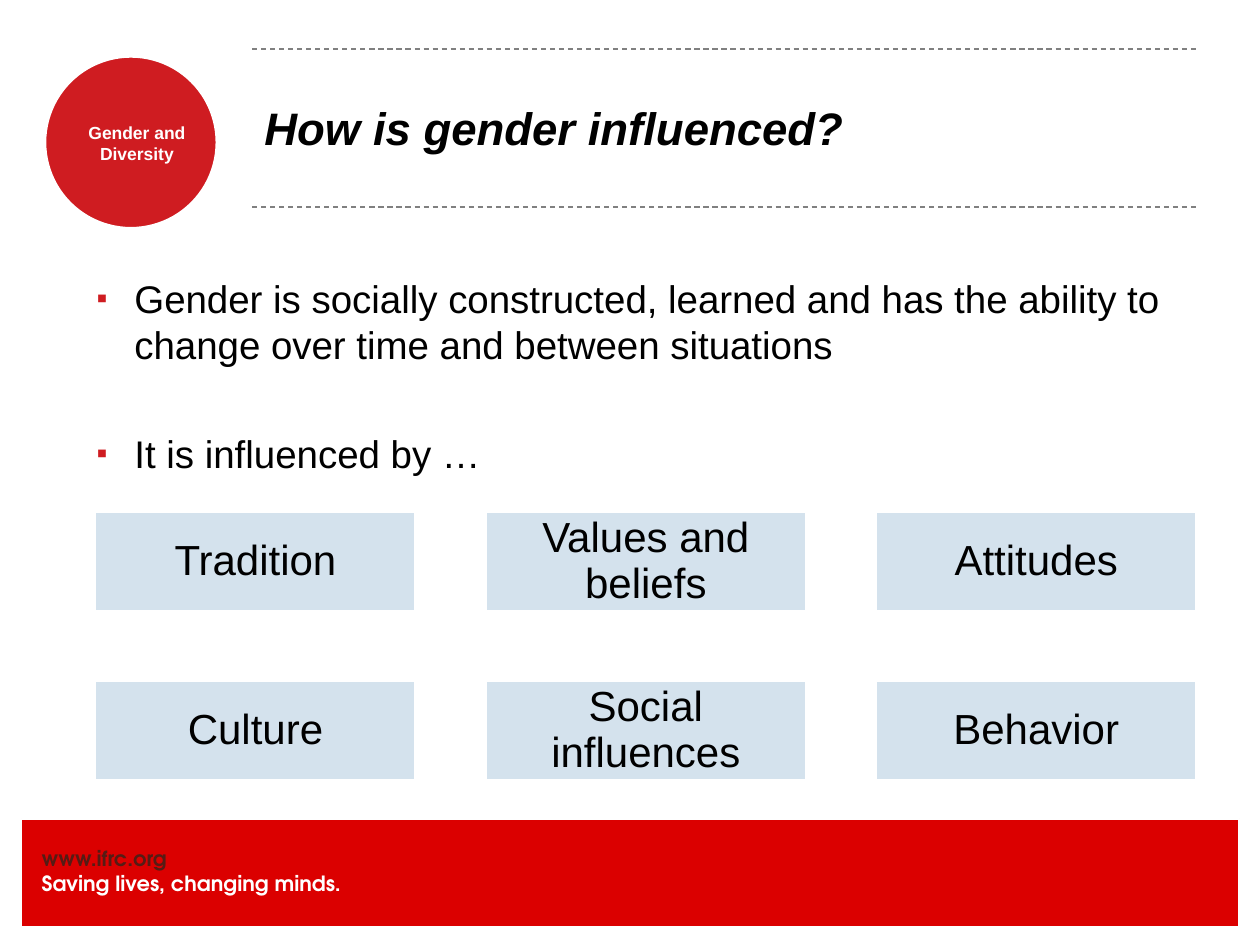
import dataclasses

import lxml.etree
import pptx
import pptx.dml.color
import pptx.enum.dml
import pptx.enum.shapes
import pptx.enum.text
import pptx.oxml.ns
import pptx.util

Cm = pptx.util.Cm
Pt = pptx.util.Pt
Color = pptx.dml.color.RGBColor.from_string
Shape = pptx.enum.shapes.MSO_SHAPE
Align = pptx.enum.text.PP_ALIGN
Anchor = pptx.enum.text.MSO_ANCHOR
qn = pptx.oxml.ns.qn


@dataclasses.dataclass(frozen=True)
class Theme:
    font: str = "Arial"
    footer_font: str = "TeX Gyre Adventor"
    black: str = "000000"
    white: str = "FFFFFF"
    gray: str = "808080"
    red: str = "CF1C21"
    footer_red: str = "DB0000"
    dark_red: str = "551C15"
    card_blue: str = "D4E2ED"
    title_size: int = 26
    card_size: int = 24
    body_size: int = 22
    footer_size: int = 12
    badge_size: int = 10


theme = Theme()


def write_text(shape, text, *, size, color=theme.black, font=theme.font, bold=False,
               italic=False, align=Align.LEFT, anchor=Anchor.TOP, margins=(0.25, 0.13),
               line_spacing=None, space_before=None, bullet=None):
    frame = shape.text_frame
    frame.word_wrap = True
    frame.vertical_anchor = anchor
    frame.margin_left = frame.margin_right = Cm(margins[0])
    frame.margin_top = frame.margin_bottom = Cm(margins[1])
    paragraph = frame.add_paragraph() if frame.text else frame.paragraphs[0]
    paragraph.alignment = align
    paragraph.line_spacing = line_spacing
    paragraph.space_before = space_before
    if bullet:
        properties = paragraph._p.get_or_add_pPr()
        properties.set("marL", str(Cm(0.76)))
        properties.set("indent", str(Cm(-0.76)))
        bullet_color = lxml.etree.SubElement(properties, qn("a:buClr"))
        lxml.etree.SubElement(bullet_color, qn("a:srgbClr"), val=theme.red)
        lxml.etree.SubElement(properties, qn("a:buSzPct"), val="80000")
        lxml.etree.SubElement(properties, qn("a:buFont"), typeface=theme.font)
        lxml.etree.SubElement(properties, qn("a:buChar"), char=bullet)
    run = paragraph.add_run()
    run.text = text
    run.font.name = font
    run.font.size = Pt(size)
    run.font.bold = bold
    run.font.italic = italic
    run.font.color.rgb = Color(color)


def add_block(kind, left, top, width, height, fill, line_width):
    shape = slide.shapes.add_shape(kind, Cm(left), Cm(top), Cm(width), Cm(height))
    shape.shadow.inherit = False
    shape.fill.solid()
    shape.fill.fore_color.rgb = Color(fill)
    shape.line.color.rgb = Color(theme.white)
    shape.line.width = Pt(line_width)
    return shape


presentation = pptx.Presentation()
presentation.slide_width = Cm(25.4)
presentation.slide_height = Cm(19.05)
slide = presentation.slides.add_slide(presentation.slide_layouts[6])

add_block(Shape.RECTANGLE, 0.43, 16.51, 24.55, 2.18, theme.footer_red, 0.75)
footer = slide.shapes.add_textbox(Cm(0.84), Cm(17.04), Cm(8.69), Cm(1.02))
for text, color in (("www.ifrc.org", theme.dark_red),
                    ("Saving lives, changing minds.", theme.white)):
    write_text(footer, text, size=theme.footer_size, color=color,
               font=theme.footer_font, bold=True, margins=(0, 0))

add_block(Shape.OVAL, 0.89, 1.12, 3.5, 3.5, theme.red, 2.5)
badge = slide.shapes.add_textbox(Cm(1.17), Cm(2.46), Cm(3.18), Cm(0.86))
write_text(badge, "Gender and Diversity", size=theme.badge_size, color=theme.white,
           bold=True, align=Align.CENTER, margins=(0, 0))

for top in (0.99, 4.17):
    rule = slide.shapes.add_connector(pptx.enum.shapes.MSO_CONNECTOR.STRAIGHT,
                                      Cm(5.08), Cm(top), Cm(24.13), Cm(top))
    rule.line.color.rgb = Color(theme.gray)
    rule.line.width = Pt(0.75)
    rule.line.dash_style = pptx.enum.dml.MSO_LINE.DASH
    lxml.etree.SubElement(rule._element.spPr, qn("a:effectLst"))

title = slide.shapes.add_textbox(Cm(5.08), Cm(0.97), Cm(19.05), Cm(3.18))
write_text(title, "How is gender influenced?", size=theme.title_size, bold=True,
           italic=True, anchor=Anchor.MIDDLE)

body = slide.shapes.add_textbox(Cm(1.7), Cm(5.41), Cm(22.43), Cm(4.7))
for text, space_before in (
    ("Gender is socially constructed, learned and has the ability to "
     "change over time and between situations", None),
    ("It is influenced by …", Pt(36)),
):
    write_text(body, text, size=theme.body_size, space_before=space_before, bullet="▪")

influences = (("Tradition", "Values and beliefs", "Attitudes"),
              ("Culture", "Social influences", "Behavior"))
for row, labels in enumerate(influences):
    for column, label in enumerate(labels):
        card = add_block(Shape.RECTANGLE, 1.91 + column * 7.87, 10.31 + row * 3.41,
                         6.48, 2.03, theme.card_blue, 2)
        write_text(card, label, size=theme.card_size, align=Align.CENTER,
                   anchor=Anchor.MIDDLE, margins=(0.25, 0.25), line_spacing=0.9)

presentation.save("out.pptx")
